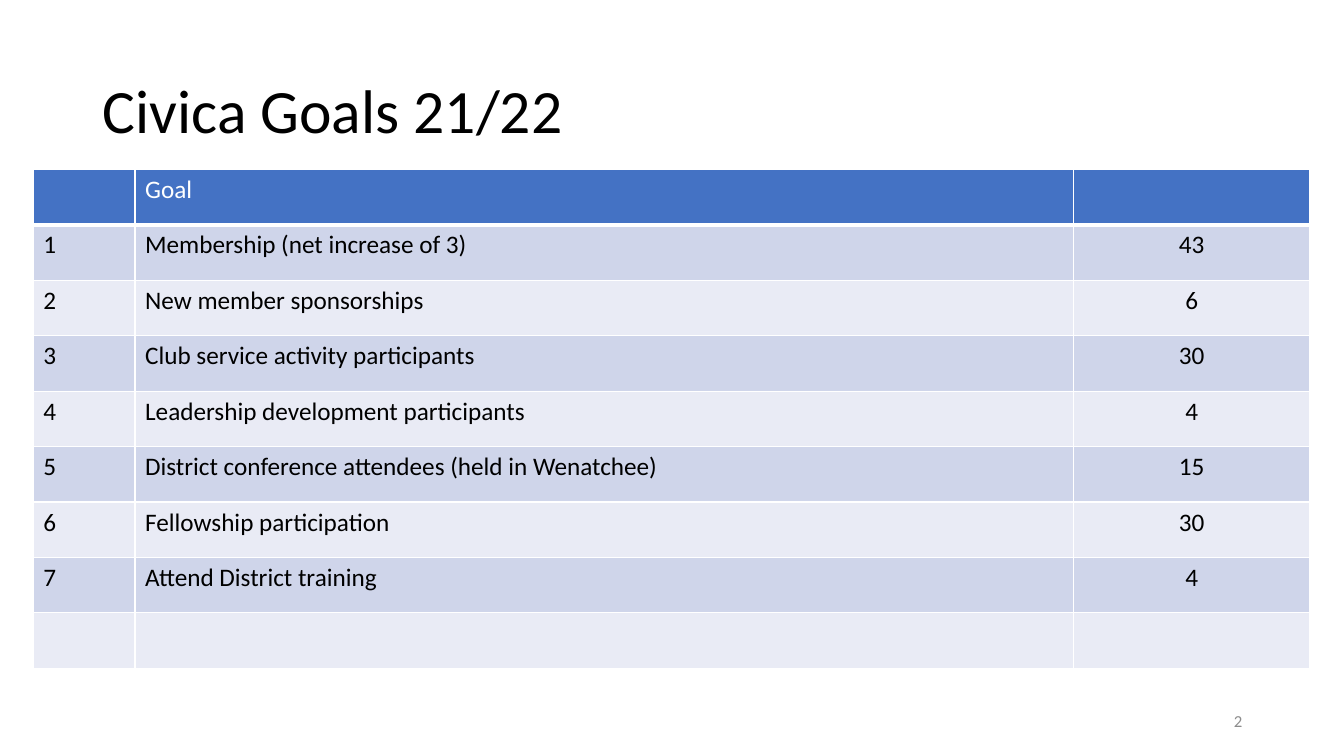
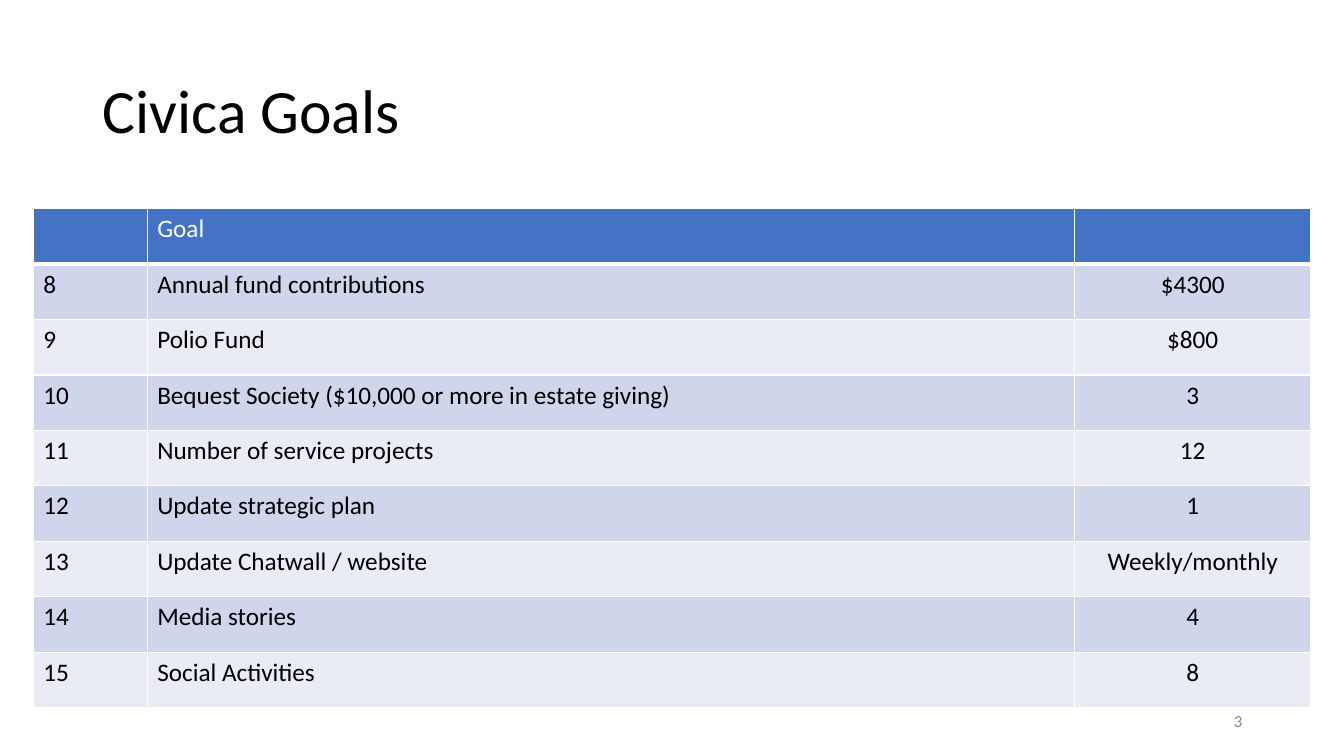
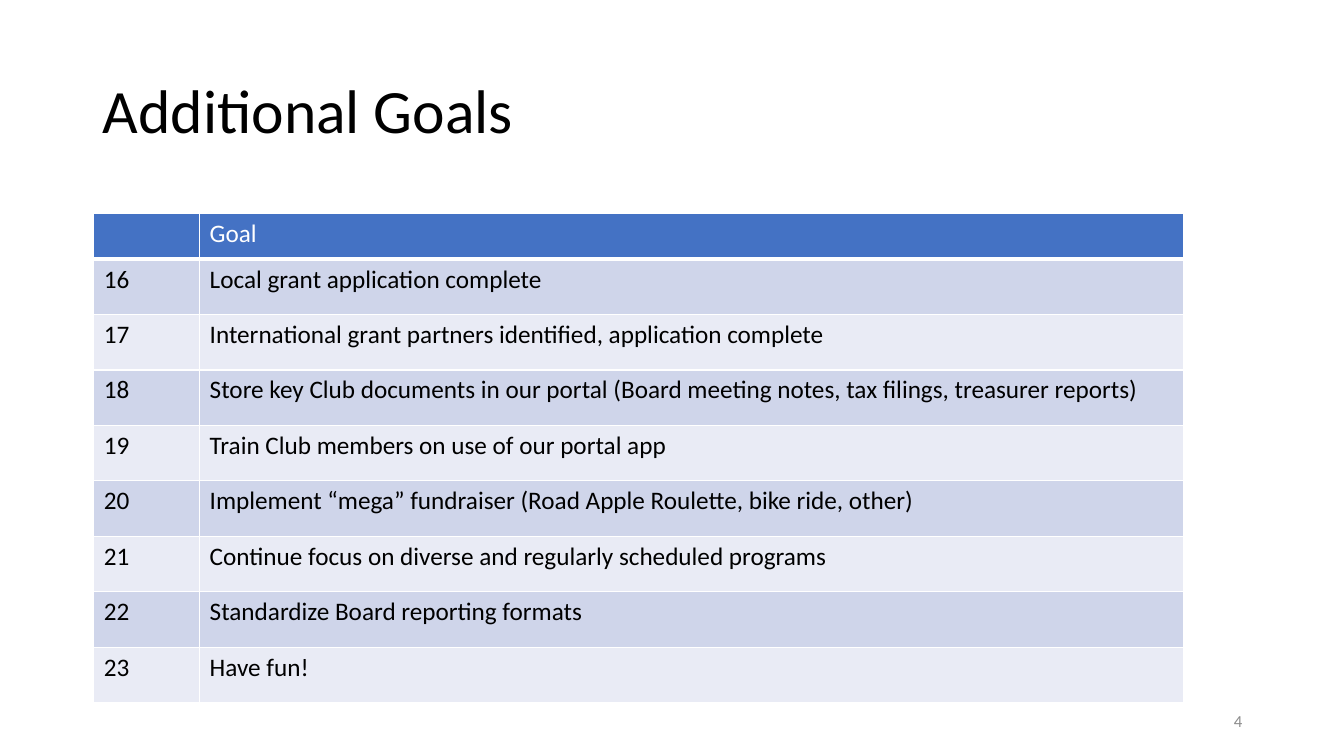
from lxml.etree import SubElement
from pptx import Presentation
from pptx.dml.color import RGBColor
from pptx.enum.text import MSO_ANCHOR as Anchor, PP_ALIGN as Align
from pptx.oxml.ns import qn
from pptx.util import Inches, Pt

COLORS = {
    "text": "000000",
    "page": "FFFFFF",
    "header": "4472C4",
    "odd": "CFD5EA",
    "even": "E9EBF5",
    "number": "8C8C8C",
}
FONT = "Calibri"
TITLE_BOX = (0.92, 0.4, 11.5, 1.45)
NUMBER_BOX = (9.42, 6.95, 3, 0.4)
ROW_HEIGHT = 0.55
FIRST_NUMBER = 2

PAGES = [
    {
        "title": "Civica Goals 21/22",
        "corner": (0.33, 1.68),
        "widths": (1.01, 9.31, 2.34),
        "header_height": 0.55,
        "rows": [
            ("", "Goal", ""),
            ("1", "Membership (net increase of 3)", "43"),
            ("2", "New member sponsorships", "6"),
            ("3", "Club service activity participants", "30"),
            ("4", "Leadership development participants", "4"),
            ("5", "District conference attendees (held in Wenatchee)", "15"),
            ("6", "Fellowship participation", "30"),
            ("7", "Attend District training", "4"),
            ("", "", ""),
        ],
    },
    {
        "title": "Civica Goals",
        "corner": (0.33, 2.07),
        "widths": (1.13, 9.2, 2.34),
        "header_height": 0.55,
        "rows": [
            ("", "Goal", ""),
            ("8", "Annual fund contributions", "$4300"),
            ("9", "Polio Fund", "$800"),
            ("10", "Bequest Society ($10,000 or more in estate giving)", "3"),
            ("11", "Number of service projects", "12"),
            ("12", "Update strategic plan", "1"),
            ("13", "Update Chatwall / website", "Weekly/monthly"),
            ("14", "Media stories", "4"),
            ("15", "Social Activities", "8"),
        ],
    },
    {
        "title": "Additional Goals",
        "corner": (0.93, 2.12),
        "widths": (1.05, 9.76),
        "header_height": 0.45,
        "rows": [
            ("", "Goal"),
            ("16", "Local grant application complete"),
            ("17", "International grant partners identified, application complete"),
            ("18", "Store key Club documents in our portal (Board meeting notes, tax filings, treasurer reports)"),
            ("19", "Train Club members on use of our portal app"),
            ("20", "Implement “mega” fundraiser (Road Apple Roulette, bike ride, other)"),
            ("21", "Continue focus on diverse and regularly scheduled programs"),
            ("22", "Standardize Board reporting formats"),
            ("23", "Have fun!"),
        ],
    },
]


def add_text(frame, text, size, color, align=Align.LEFT):
    """Write one formatted run in the first paragraph and return the paragraph."""
    para = frame.paragraphs[0]
    para.alignment = align
    span = para.add_run()
    span.text = text
    span.font.size = Pt(size)
    span.font.name = FONT
    span.font.bold = False
    span.font.color.rgb = RGBColor.from_string(COLORS[color])
    return para


def add_title(page, text, box):
    """Place and format the title placeholder."""
    title = page.shapes.title
    title.left, title.top, title.width, title.height = map(Inches, box)
    title.text_frame.vertical_anchor = Anchor.MIDDLE
    add_text(title.text_frame, text, 44, "text").line_spacing = 0.9


def add_number(page, number, box):
    """Write the page number at the right edge of its box."""
    frame = page.shapes.add_textbox(*map(Inches, box)).text_frame
    frame.word_wrap = True
    frame.vertical_anchor = Anchor.MIDDLE
    add_text(frame, str(number), 12, "number", Align.RIGHT)


def set_borders(cell, bottom):
    """Draw white lines around a cell, with the bottom width in points."""
    properties = cell._tc.get_or_add_tcPr()
    for side, width in (("L", 1), ("R", 1), ("T", 1), ("B", bottom)):
        line = SubElement(properties, qn(f"a:ln{side}"), w=str(Pt(width)))
        fill = SubElement(line, qn("a:solidFill"))
        SubElement(fill, qn("a:srgbClr"), val=COLORS["page"])


def add_goals(page, corner, widths, header_height, rows):
    """Build the banded goals table with its top left at the corner."""
    heights = [header_height] + [ROW_HEIGHT] * (len(rows) - 1)
    box = (*corner, sum(widths), sum(heights))
    table = page.shapes.add_table(len(rows), len(widths), *map(Inches, box)).table
    for column, width in zip(table.columns, widths):
        column.width = Inches(width)
    for index, (row, height, texts) in enumerate(zip(table.rows, heights, rows)):
        row.height = Inches(height)
        band = "header" if index == 0 else "odd" if index % 2 else "even"
        for position, (cell, text) in enumerate(zip(row.cells, texts)):
            set_borders(cell, 1 if index else 3)
            cell.fill.solid()
            cell.fill.fore_color.rgb = RGBColor.from_string(COLORS[band])
            if text:
                align = Align.CENTER if position == 2 else Align.LEFT
                add_text(cell.text_frame, text, 18, "text" if index else "page", align)


def add_page(deck, number, title, **goals):
    """Add one goals slide with title, table and page number."""
    page = deck.slides.add_slide(deck.slide_layouts[5])
    add_title(page, title, TITLE_BOX)
    add_number(page, number, NUMBER_BOX)
    add_goals(page, **goals)


def main():
    """Build and save the deck."""
    deck = Presentation()
    deck.slide_width, deck.slide_height = Inches(13.33), Inches(7.5)
    for number, content in enumerate(PAGES, FIRST_NUMBER):
        add_page(deck, number, **content)
    deck.save("out.pptx")


if __name__ == "__main__":
    main()
